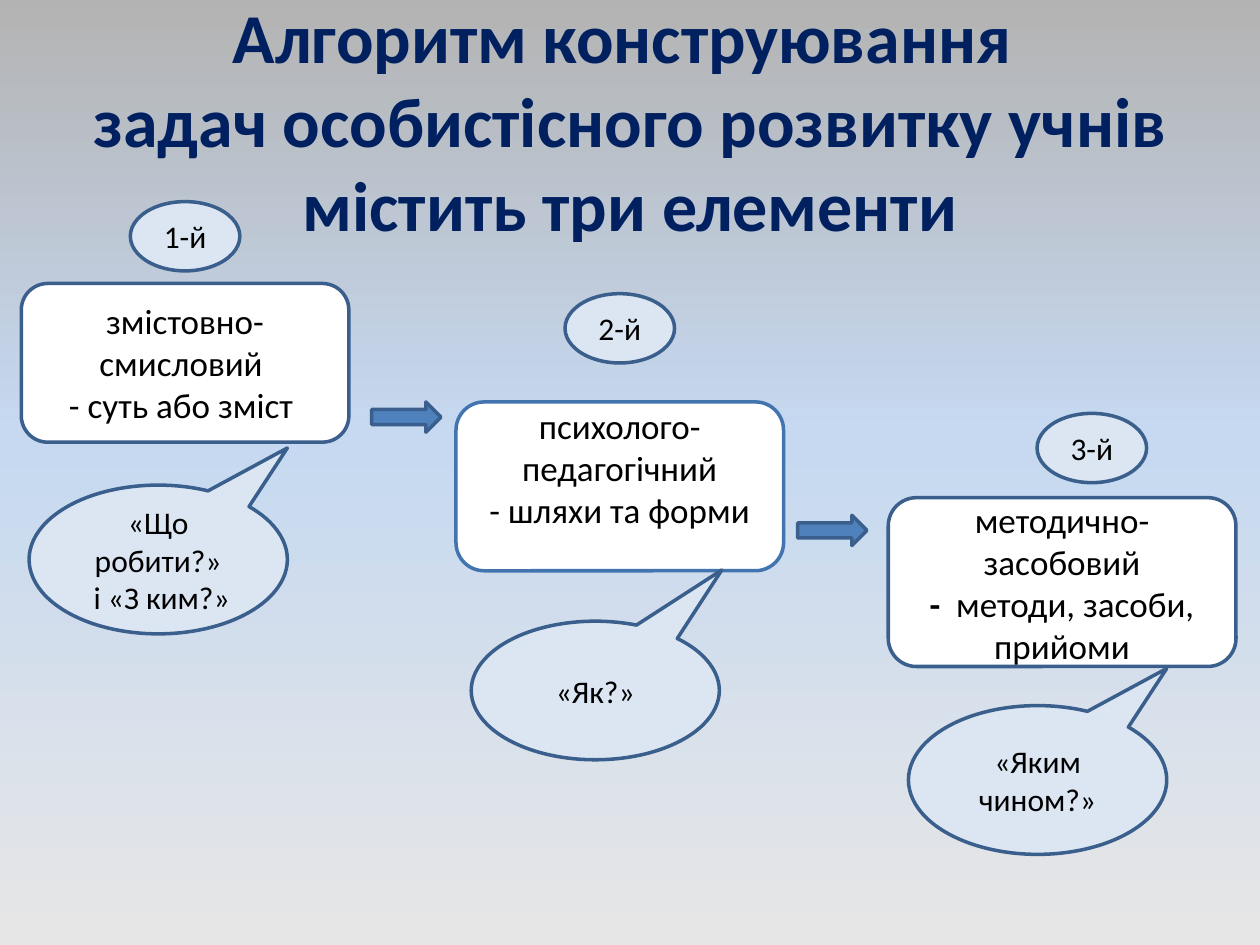
from copy import deepcopy

from pptx import Presentation
from pptx.dml.color import RGBColor
from pptx.enum import shapes, text
from pptx.util import Pt

NAVY = RGBColor(0x00, 0x20, 0x60)
BLACK = RGBColor(0x00, 0x00, 0x00)
WHITE = RGBColor(0xFF, 0xFF, 0xFF)
PALE_BLUE = RGBColor(0xDC, 0xE6, 0xF2)
BLUE = RGBColor(0x4F, 0x81, 0xBD)
EDGE = RGBColor(0x3A, 0x5F, 0x8C)
BRIGHT_EDGE = RGBColor(0x42, 0x74, 0xAF)
BACKGROUND = [
    (0, RGBColor(0xB3, 0xB3, 0xB3)),
    (0.46, RGBColor(0xC6, 0xD9, 0xF1)),
    (1, RGBColor(0xE6, 0xE6, 0xE6)),
]
KIND = shapes.MSO_SHAPE


def write(shape, lines, size=18, color=BLACK, bold=False, bold_lead="", breaks=False):
    frame = shape.text_frame
    frame.word_wrap = True
    frame.vertical_anchor = text.MSO_ANCHOR.MIDDLE
    for index, line in enumerate(lines):
        para = frame.paragraphs[0]
        if index and breaks:
            para.add_line_break()
        elif index:
            para = frame.add_paragraph()
        para.alignment = text.PP_ALIGN.CENTER
        para.font.size = Pt(size)
        lead = bold_lead if bold_lead and line.startswith(bold_lead) else ""
        for part, heavy in ((lead, True), (line[len(lead):], bold)):
            if part:
                span = para.add_run()
                span.text = part
                span.font.name = "Calibri"
                span.font.size = Pt(size)
                span.font.bold = heavy
                span.font.color.rgb = color


def draw(page, kind, box, fill, line=EDGE):
    shape = page.shapes.add_shape(kind, *map(Pt, box))
    shape.shadow.inherit = False
    shape.fill.solid()
    shape.fill.fore_color.rgb = fill
    shape.line.color.rgb = line
    shape.line.width = Pt(2)
    return shape


def paint_background(page):
    fill = page.background.fill
    fill.gradient()
    fill.gradient_angle = 270
    first = fill.gradient_stops[0]._gs
    first.addnext(deepcopy(first))
    for stop, (position, color) in zip(fill.gradient_stops, BACKGROUND):
        stop.position = position
        stop.color.rgb = color


def add_title(page, box):
    title = page.shapes.add_textbox(*map(Pt, box))
    lines = [
        "Алгоритм конструювання ",
        "задач особистісного розвитку учнів",
        "містить три елементи",
    ]
    write(title, lines, size=40, color=NAVY, bold=True, breaks=True)


def add_badge(page, box, label, gap, shift=0):
    left, top, width, _ = box
    place = (left + (width - 62.6) / 2 + shift, top - gap - 39.6, 62.6, 39.6)
    write(draw(page, KIND.OVAL, place, PALE_BLUE), [label])


def add_element(page, box, lines, edge=EDGE, insets=(3.6, 3.6), bold_lead=""):
    element = draw(page, KIND.ROUNDED_RECTANGLE, box, WHITE, edge)
    write(element, lines, size=20, bold_lead=bold_lead)
    element.text_frame.margin_top, element.text_frame.margin_bottom = map(Pt, insets)


def add_question(page, box, offset, size, tip, lines):
    left, top, _, height = box
    place = (left + offset[0], top + height + offset[1], *size)
    callout = draw(page, KIND.OVAL_CALLOUT, place, PALE_BLUE)
    callout.adjustments[0], callout.adjustments[1] = tip
    write(callout, lines)


def add_arrow(page, box, gap, drop):
    left, top, width, _ = box
    draw(page, KIND.RIGHT_ARROW, (left + width + gap, top + drop, 39.6, 17.3), BLUE)


def main():
    deck = Presentation()
    deck.slide_width, deck.slide_height = Pt(720), Pt(540)
    page = deck.slides.add_slide(deck.slide_layouts[6])
    paint_background(page)
    add_title(page, (36, 21.6, 648, 93.6))

    content = (12.2, 162, 187.2, 90.7)
    psychology = (260.6, 229.7, 187.2, 96.5)
    method = (507.6, 284.4, 198.7, 96.5)
    wide, wide_tip = (147.6, 85), (0.5, -0.75)

    add_badge(page, content, "1-й", gap=7.2)
    add_element(page, content, ["змістовно-смисловий ", "- суть або зміст "])
    add_question(page, content, (4.4, 24.5), wide, wide_tip,
                 ["«Що робити?»", " і «З ким?»"])
    add_arrow(page, content, gap=13, drop=67.7)

    add_badge(page, psychology, "2-й", gap=22.3)
    add_element(page, psychology, ["психолого-педагогічний", "- шляхи та форми"],
                edge=BRIGHT_EDGE, insets=(0, 22))
    add_question(page, psychology, (8.7, 28.8), (141.8, 79.2), (0.51, -0.87), ["«Як?»"])
    add_arrow(page, psychology, gap=8, drop=64.8)

    add_badge(page, method, "3-й", gap=8.6, shift=17)
    add_element(page, method, ["методично-засобовий", "-  методи, засоби, прийоми"],
                bold_lead="- ")
    add_question(page, method, (11.5, 22.3), wide, wide_tip, ["«Яким чином?»"])

    deck.save("out.pptx")


if __name__ == "__main__":
    main()
